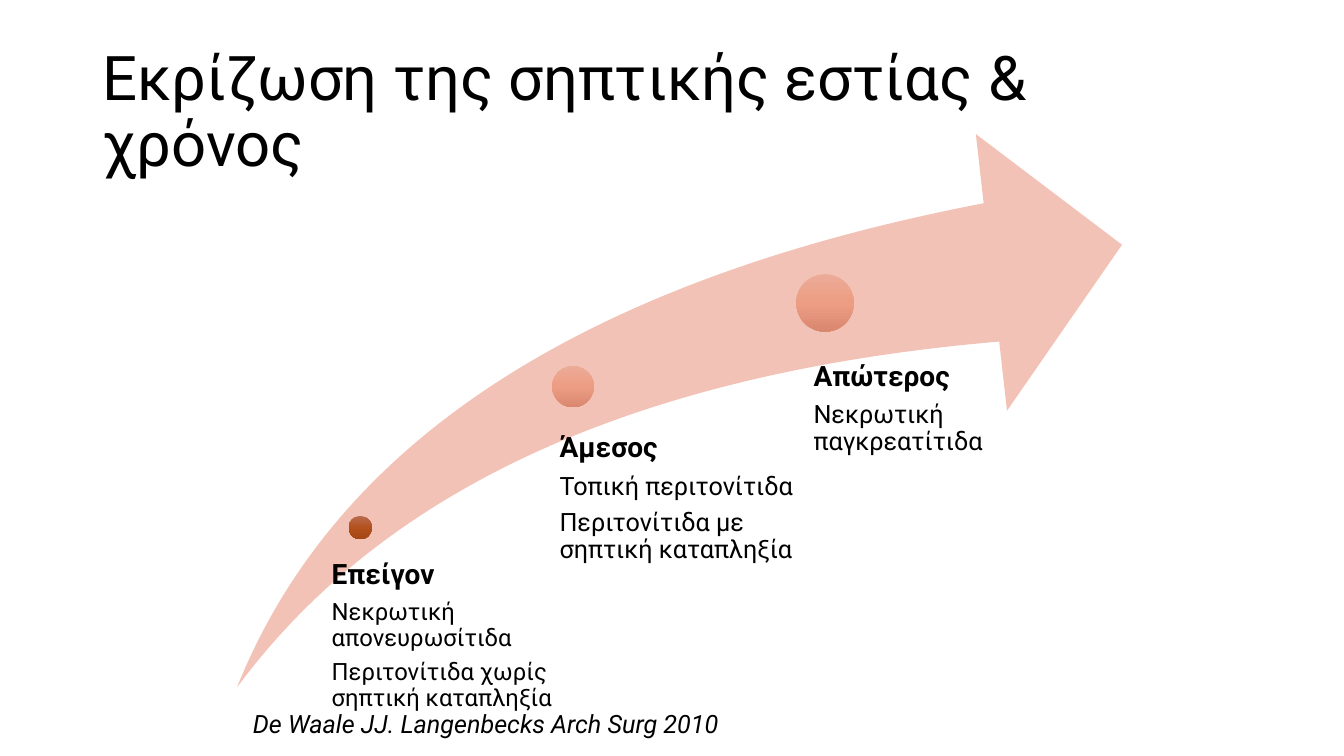
from copy import deepcopy

from pptx import Presentation
from pptx.dml.color import RGBColor
from pptx.enum.shapes import MSO_SHAPE as Preset
from pptx.enum.text import MSO_ANCHOR as Anchor
from pptx.oxml.ns import qn
from pptx.util import Inches, Pt

THEME = {
    "font": "Roboto",
    "text": "000000",
    "arrow": "F3C2B6",
    "dark dot": ("B86B50", "B3511E", "A54715"),
    "light dot": ("ECAB97", "ED9D83", "D9886F"),
    "title size": 44,
    "heading size": 20,
    "small size": 17,
    "body size": 18,
}

deck = Presentation()
deck.slide_width, deck.slide_height = Inches(13.333), Inches(7.5)
slide = deck.slides.add_slide(deck.slide_layouts[6])
column, row = deck.slide_width / 100, deck.slide_height / 100


def add_text(lines, left, top, width, height, inset=None, anchor=Anchor.TOP,
             spacing=1.0, gap=0, italic=False):
    box = slide.shapes.add_textbox(int(left * column), int(top * row),
                                   int(width * column), int(height * row))
    frame = box.text_frame
    frame.word_wrap = True
    frame.vertical_anchor = anchor
    if inset is not None:
        frame.margin_left = int(inset * column)
        frame.margin_top = frame.margin_right = frame.margin_bottom = 0
    for index, (text, size, bold) in enumerate(lines):
        para = frame.add_paragraph() if index else frame.paragraphs[0]
        para.line_spacing = spacing
        para.space_after = Pt(gap * size)
        span = para.add_run()
        span.text = text
        span.font.name = THEME["font"]
        span.font.size = Pt(size)
        span.font.bold = bold
        span.font.italic = italic
        span.font.color.rgb = RGBColor.from_string(THEME["text"])


def add_preset(preset, left, top, width, height):
    shape = slide.shapes.add_shape(preset, int(left), int(top), int(width), int(height))
    shape.shadow.inherit = False
    shape.line.fill.background()
    return shape


arrow = add_preset(Preset.SWOOSH_ARROW, 17.63 * column, 17.73 * row, 65.85 * column, 73.2 * row)
arrow.adjustments[0] = arrow.adjustments[1] = 0.25
arrow.fill.solid()
arrow.fill.fore_color.rgb = RGBColor.from_string(THEME["arrow"])

stages = [
    ("Επείγον", ["Νεκρωτική απονευρωσίτιδα", "Περιτονίτιδα χωρίς σηπτική καταπληξία"],
     "small size", "dark dot", (26.81, 69.8, 1.73), (23.78, 74.13, 21.53, 12.4), 0.9),
    ("Άμεσος", ["Τοπική περιτονίτιδα", "Περιτονίτιδα με σηπτική καταπληξία"],
     "body size", "light dot", (42.64, 51.13, 3.1), (39.98, 57.33, 21.38, 16.67), 1.65),
    ("Απώτερος", ["Νεκρωτική παγκρεατίτιδα"],
     "body size", "light dot", (61.39, 40.07, 4.28), (58.28, 47.87, 15.83, 19.33), 2.25),
]

for heading, details, size, shades, (across, down, diameter), area, inset in stages:
    side = diameter * column
    dot = add_preset(Preset.OVAL, across * column - side / 2, down * row - side / 2, side, side)
    dot.fill.gradient()
    dot.fill.gradient_angle = 270
    stop_list = dot.element.spPr.find(qn("a:gradFill")).find(qn("a:gsLst"))
    stop_list.append(deepcopy(stop_list[0]))
    for stop, shade, position in zip(dot.fill.gradient_stops, THEME[shades], (0, 0.5, 1)):
        stop.color.rgb = RGBColor.from_string(shade)
        stop.position = position

    lines = [(heading, THEME["heading size"], True)]
    lines += [(detail, THEME[size], False) for detail in details]
    add_text(lines, *area, inset=inset, spacing=0.9, gap=0.35)

add_text([("Εκρίζωση της σηπτικής εστίας & χρόνος", THEME["title size"], False)],
         6.88, 5.33, 85.5, 19.33, anchor=Anchor.MIDDLE, spacing=0.9)
add_text([("De Waale JJ. Langenbecks Arch Surg 2010", THEME["body size"], False)],
         18.08, 93.07, 60.83, 5.33, italic=True)

deck.save("out.pptx")
